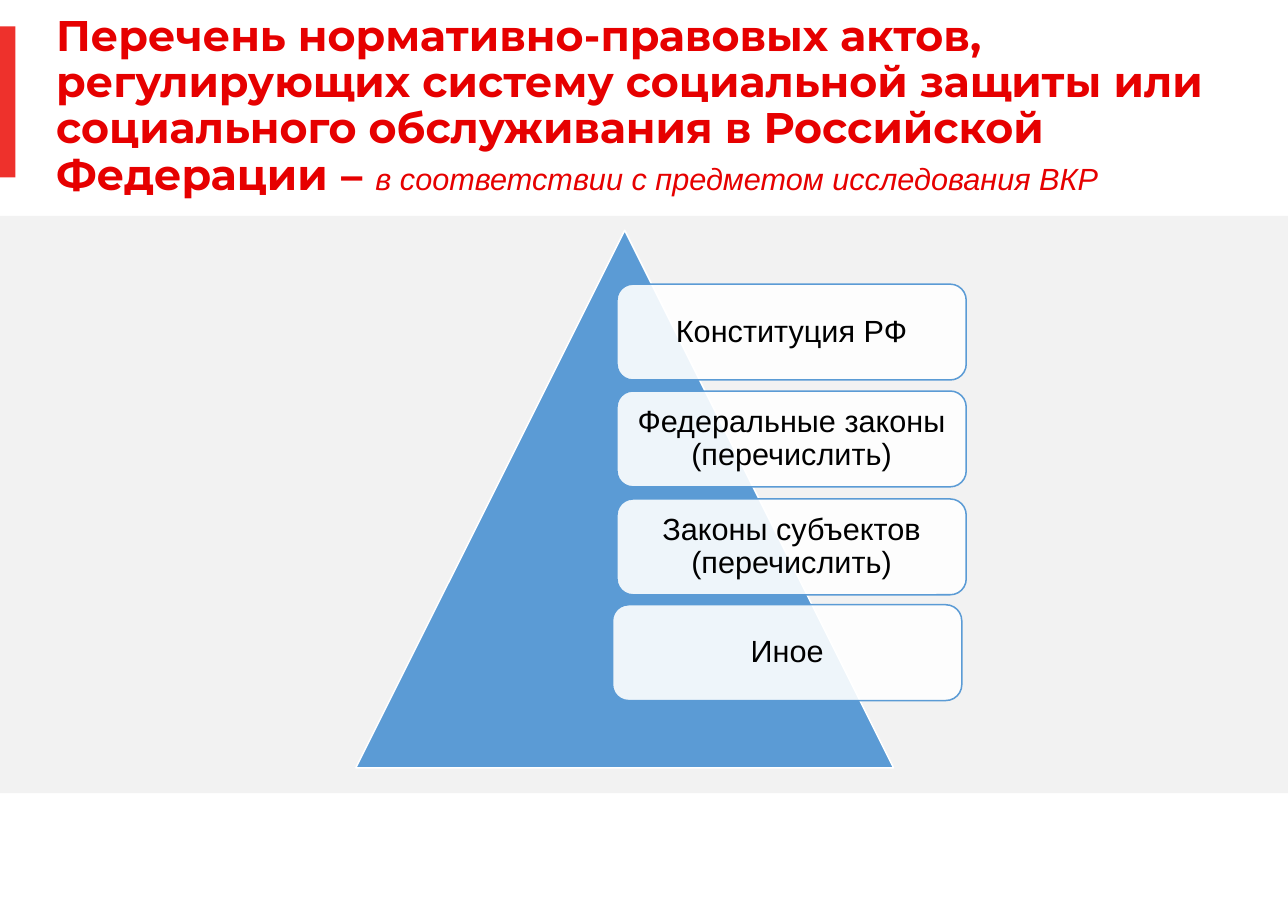
from lxml.etree import SubElement
from pptx import Presentation
from pptx.dml.color import RGBColor
from pptx.enum.shapes import MSO_SHAPE
from pptx.enum.text import MSO_ANCHOR, MSO_AUTO_SIZE, PP_ALIGN
from pptx.oxml.ns import qn
from pptx.util import Inches, Pt

TITLE = ("Перечень нормативно-правовых актов, регулирующих систему социальной "
         "защиты или социального обслуживания в Российской Федерации ")
DASH = "– "
SUBTITLE = "в соответствии с предметом исследования ВКР"
# Label, left, top
LEVELS = [
    ("Конституция РФ", 5.6, 2.58),
    ("Федеральные законы (перечислить)", 5.6, 3.55),
    ("Законы субъектов (перечислить)", 5.6, 4.53),
    ("Иное", 5.56, 5.49),
]
LEVEL_WIDTH, LEVEL_HEIGHT = 3.17, 0.87

WHITE = RGBColor(0xFF, 0xFF, 0xFF)
BLACK = RGBColor(0, 0, 0)
GRAY = RGBColor(0xF2, 0xF2, 0xF2)
BLUE = RGBColor(0x5B, 0x9B, 0xD5)
ACCENT_RED = RGBColor(0xEE, 0x31, 0x2C)
TITLE_RED = RGBColor(0xE6, 0, 0)


def add_filled(page, kind, left, top, width, height, fill, line=None):
    shape = page.shapes.add_shape(kind, Inches(left), Inches(top), Inches(width), Inches(height))
    shape.shadow.inherit = False
    shape.fill.solid()
    shape.fill.fore_color.rgb = fill
    if line is None:
        shape.line.fill.background()
    else:
        shape.line.color.rgb = line
        shape.line.width = Pt(1)
    return shape


def set_opacity(shape, percent):
    color = shape.fill._xPr.find(qn("a:solidFill"))[0]
    SubElement(color, qn("a:alpha"), val=str(percent * 1000))


def set_insets(frame, inset):
    frame.margin_left = frame.margin_right = Inches(inset)
    frame.margin_top = frame.margin_bottom = Inches(inset)


def add_title(page):
    title = page.shapes.title
    title.left, title.top = Inches(0.51), Inches(0.12)
    title.width, title.height = Inches(10.59), Inches(1.7)
    frame = title.text_frame
    frame.word_wrap = True
    frame.auto_size = MSO_AUTO_SIZE.NONE
    frame.vertical_anchor = MSO_ANCHOR.MIDDLE
    set_insets(frame, 0)
    para = frame.paragraphs[0]
    para.alignment = PP_ALIGN.LEFT
    para.line_spacing = 0.9
    for text, font, size, main in [
        (TITLE, "Montserrat", 28, True),
        (DASH, "Arial", 28, True),
        (SUBTITLE, "Arial", 20, False),
    ]:
        span = para.add_run()
        span.text = text
        span.font.name = font
        span.font.size = Pt(size)
        span.font.bold = main
        span.font.italic = not main
        span.font.color.rgb = TITLE_RED


def add_level(page, label, left, top):
    box = add_filled(page, MSO_SHAPE.ROUNDED_RECTANGLE, left, top,
                     LEVEL_WIDTH, LEVEL_HEIGHT, WHITE, BLUE)
    set_opacity(box, 90)
    frame = box.text_frame
    frame.word_wrap = True
    frame.vertical_anchor = MSO_ANCHOR.MIDDLE
    set_insets(frame, 0.08)
    para = frame.paragraphs[0]
    para.text = label
    para.alignment = PP_ALIGN.CENTER
    para.line_spacing = 0.9
    para.font.name = "Arial"
    para.font.size = Pt(20)
    para.font.color.rgb = BLACK


def main():
    deck = Presentation()
    deck.slide_width, deck.slide_height = Inches(11.69), Inches(8.27)
    page = deck.slides.add_slide(deck.slide_layouts[5])
    add_filled(page, MSO_SHAPE.RECTANGLE, 0, 1.96, 11.69, 5.24, GRAY)
    add_filled(page, MSO_SHAPE.RECTANGLE, 0, 0.24, 0.14, 1.37, ACCENT_RED)
    add_title(page)
    add_filled(page, MSO_SHAPE.ISOSCELES_TRIANGLE, 3.23, 2.09, 4.88, 4.88, BLUE, WHITE)
    for label, left, top in LEVELS:
        add_level(page, label, left, top)
    deck.save("out.pptx")


if __name__ == "__main__":
    main()
